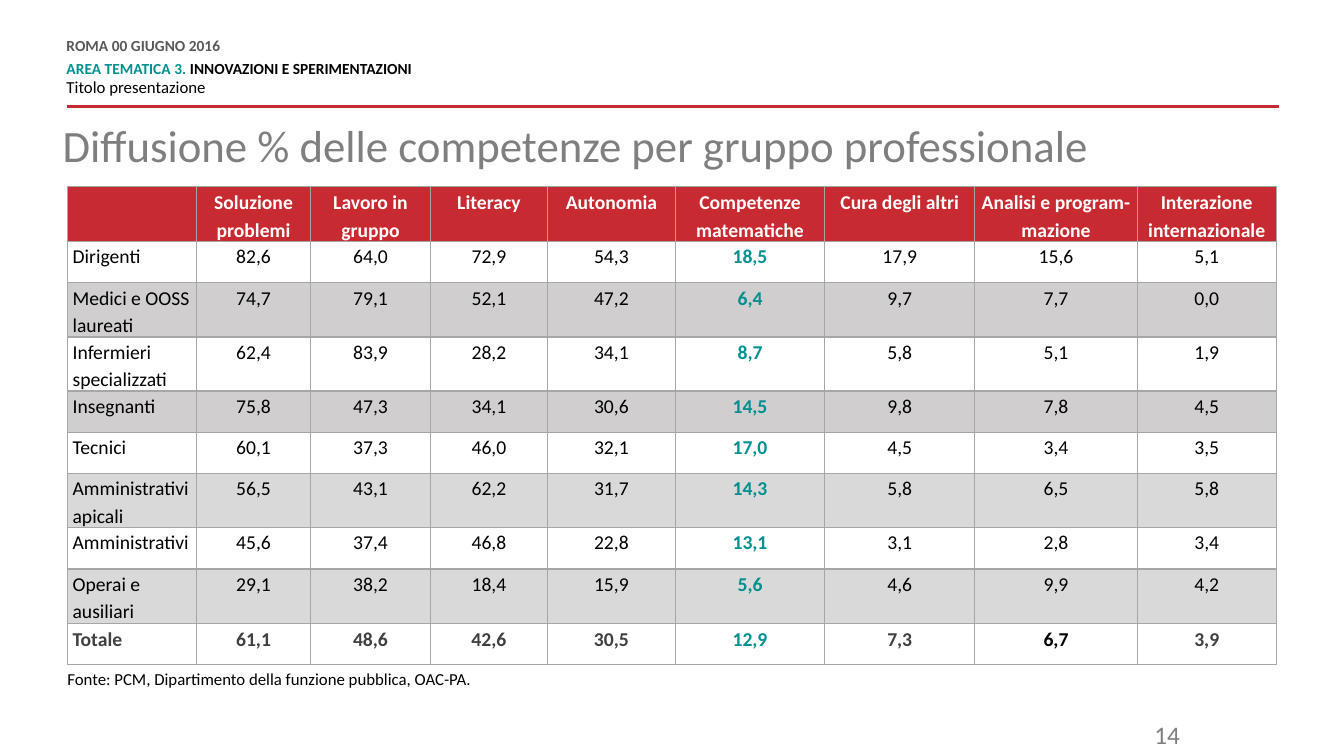
from lxml.etree import SubElement
from pptx import Presentation
from pptx.dml.color import RGBColor
from pptx.enum.shapes import MSO_CONNECTOR
from pptx.enum.text import MSO_ANCHOR as Anchor, MSO_AUTO_SIZE as AutoSize, PP_ALIGN as Align
from pptx.oxml.ns import qn
from pptx.util import Inches, Pt

RED, TEAL, BLACK, WHITE = "C72A31", "009190", "000000", "FFFFFF"
GREY, DARK_GREY, BORDER = "7F7F7F", "404040", "A6A6A6"
WARM_BAND, COOL_BAND = "D0CECE", "D9D9D9"
HIGHLIGHT_COLUMN, ANALYSIS_COLUMN = 5, 7

HEADINGS = ["", "Soluzione problemi", "Lavoro in gruppo", "Literacy", "Autonomia",
            "Competenze matematiche", "Cura degli altri", "Analisi e program-mazione",
            "Interazione internazionale"]
GROUPS = [
    ("Dirigenti", "82,6 64,0 72,9 54,3 18,5 17,9 15,6 5,1", WHITE),
    ("Medici e OOSS laureati", "74,7 79,1 52,1 47,2 6,4 9,7 7,7 0,0", WARM_BAND),
    ("Infermieri specializzati", "62,4 83,9 28,2 34,1 8,7 5,8 5,1 1,9", WHITE),
    ("Insegnanti", "75,8 47,3 34,1 30,6 14,5 9,8 7,8 4,5", WARM_BAND),
    ("Tecnici", "60,1 37,3 46,0 32,1 17,0 4,5 3,4 3,5", None),
    ("Amministrativi apicali", "56,5 43,1 62,2 31,7 14,3 5,8 6,5 5,8", COOL_BAND),
    ("Amministrativi", "45,6 37,4 46,8 22,8 13,1 3,1 2,8 3,4", None),
    ("Operai e ausiliari", "29,1 38,2 18,4 15,9 5,6 4,6 9,9 4,2", COOL_BAND),
    ("Totale", "61,1 48,6 42,6 30,5 12,9 7,3 6,7 3,9", WHITE),
]
COLUMN_WIDTHS = [1.28, 1.13, 1.19, 1.16, 1.27, 1.48, 1.49, 1.61, 1.38]
ROW_HEIGHT = 0.41


def rgb(color):
    return RGBColor.from_string(color)


def set_attributes(target, values):
    for name, value in values.items():
        setattr(target, name, value)


def add_run(paragraph, text, size, color, bold=False):
    run = paragraph.add_run()
    run.text = text
    set_attributes(run.font, {"name": "Calibri", "size": Pt(size), "bold": bold})
    run.font.color.rgb = rgb(color)


def add_text(slide, left, top, width, height, paragraphs, **frame_format):
    """Each paragraph is a list of run tuples and a dict of paragraph values."""
    box = slide.shapes.add_textbox(Inches(left), Inches(top), Inches(width), Inches(height))
    frame = box.text_frame
    set_attributes(frame, {"word_wrap": True} | frame_format)
    for index, (runs, paragraph_format) in enumerate(paragraphs):
        paragraph = frame.add_paragraph() if index else frame.paragraphs[0]
        set_attributes(paragraph, paragraph_format)
        for run in runs:
            add_run(paragraph, *run)


def add_rule(slide, left, right, top):
    rule = slide.shapes.add_connector(
        MSO_CONNECTOR.STRAIGHT, Inches(left), Inches(top), Inches(right), Inches(top))
    rule.line.width = Pt(2)
    rule.line.color.rgb = rgb(RED)
    SubElement(rule._element.spPr, qn("a:effectLst"))


def add_borders(cell):
    properties = cell._tc.get_or_add_tcPr()
    for side in ("lnL", "lnR", "lnT", "lnB"):
        line = SubElement(properties, qn(f"a:{side}"), w=str(Pt(1)))
        fill = SubElement(line, qn("a:solidFill"))
        SubElement(fill, qn("a:srgbClr"), val=BORDER)


def fill_cell(cell, text, fill, color, bold, paragraph_format, margin_top):
    set_attributes(cell, {"margin_left": Inches(0.05), "margin_right": Inches(0.05),
                          "margin_top": Inches(margin_top), "margin_bottom": 0})
    add_borders(cell)
    if fill:
        cell.fill.solid()
        cell.fill.fore_color.rgb = rgb(fill)
    else:
        cell.fill.background()
    if text:
        paragraph = cell.text_frame.paragraphs[0]
        set_attributes(paragraph, {"line_spacing": 1.15} | paragraph_format)
        add_run(paragraph, text, 14, color, bold)


def value_style(column, is_total):
    """Colour and weight of a cell below the headings."""
    if column == HIGHLIGHT_COLUMN:
        return TEAL, True
    if is_total and column != ANALYSIS_COLUMN:
        return DARK_GREY, True
    return BLACK, is_total


def add_skills_table(slide):
    row_count = len(GROUPS) + 1
    table = slide.shapes.add_table(
        row_count, len(HEADINGS), Inches(0.67), Inches(1.85),
        Inches(sum(COLUMN_WIDTHS)), Inches(ROW_HEIGHT * row_count)).table
    table.horz_banding = False
    for column, width in zip(table.columns, COLUMN_WIDTHS):
        column.width = Inches(width)
    for row in table.rows:
        row.height = Inches(ROW_HEIGHT)

    for column, heading in enumerate(HEADINGS):
        fill_cell(table.cell(0, column), heading, RED, WHITE, True,
                  {"alignment": Align.CENTER}, 0.01)
    for row, (group, values, fill) in enumerate(GROUPS, start=1):
        is_total = group == "Totale"
        for column, text in enumerate([group, *values.split()]):
            color, bold = value_style(column, is_total)
            paragraph_format = {"alignment": Align.CENTER if column else Align.LEFT,
                                "space_after": Pt(0 if is_total else 10)}
            fill_cell(table.cell(row, column), text, fill, color, bold,
                      paragraph_format, 0.01 if is_total else 0)


def main():
    presentation = Presentation()
    presentation.slide_width, presentation.slide_height = Inches(13.33), Inches(7.5)
    slide = presentation.slides.add_slide(presentation.slide_layouts[6])
    no_margins = dict.fromkeys(
        ("margin_left", "margin_top", "margin_right", "margin_bottom"), 0)
    tight = {"line_spacing": Pt(10.8)}

    add_rule(slide, 0.66, 12.69, 1.06)
    add_text(slide, 0.66, 0.39, 8.34, 0.59, [
        ([("ROMA 00 GIUGNO 2016", 11, "595959", True)], tight | {"space_after": Pt(6)}),
        ([("AREA TEMATICA 3. ", 11, TEAL, True),
          ("INNOVAZIONI E SPERIMENTAZIONI", 11, BLACK, True)], tight),
        ([("Titolo presentazione", 12, BLACK)],
         tight | {"space_before": Pt(3), "space_after": Pt(6)}),
    ], auto_size=AutoSize.SHAPE_TO_FIT_TEXT, **no_margins)
    add_text(slide, 0.62, 1.23, 12.11, 1.13, [
        ([("Diffusione % delle competenze per gruppo professionale", 32, GREY)],
         {"line_spacing": 0.9}),
    ], **no_margins)
    add_text(slide, 8.8, 7.09, 3, 0.4, [([("14", 18, GREY)], {"alignment": Align.RIGHT})],
             vertical_anchor=Anchor.MIDDLE)
    add_skills_table(slide)
    add_text(slide, 0.57, 6.59, 4.33, 0.3, [
        ([("Fonte: PCM, Dipartimento della funzione pubblica, OAC-PA.", 12, BLACK)], {}),
    ], word_wrap=False, auto_size=AutoSize.SHAPE_TO_FIT_TEXT)
    presentation.save("out.pptx")


if __name__ == "__main__":
    main()
